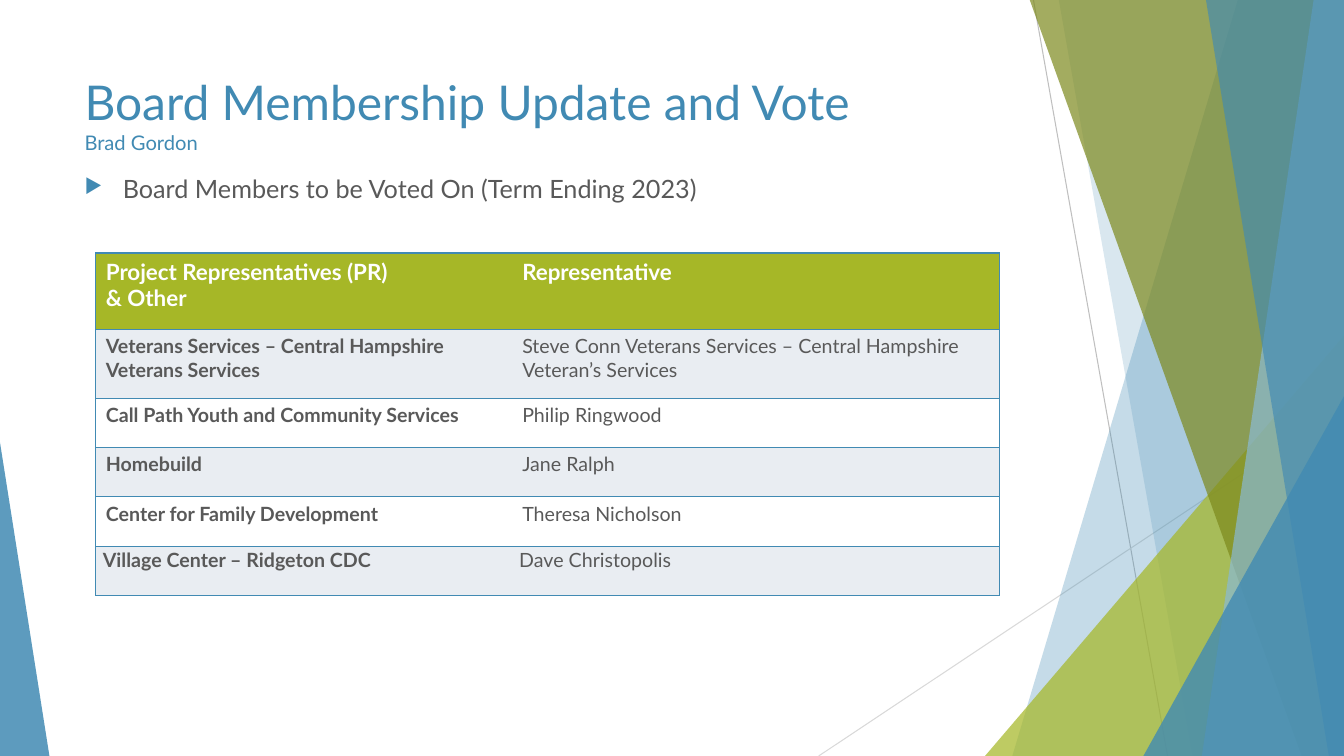
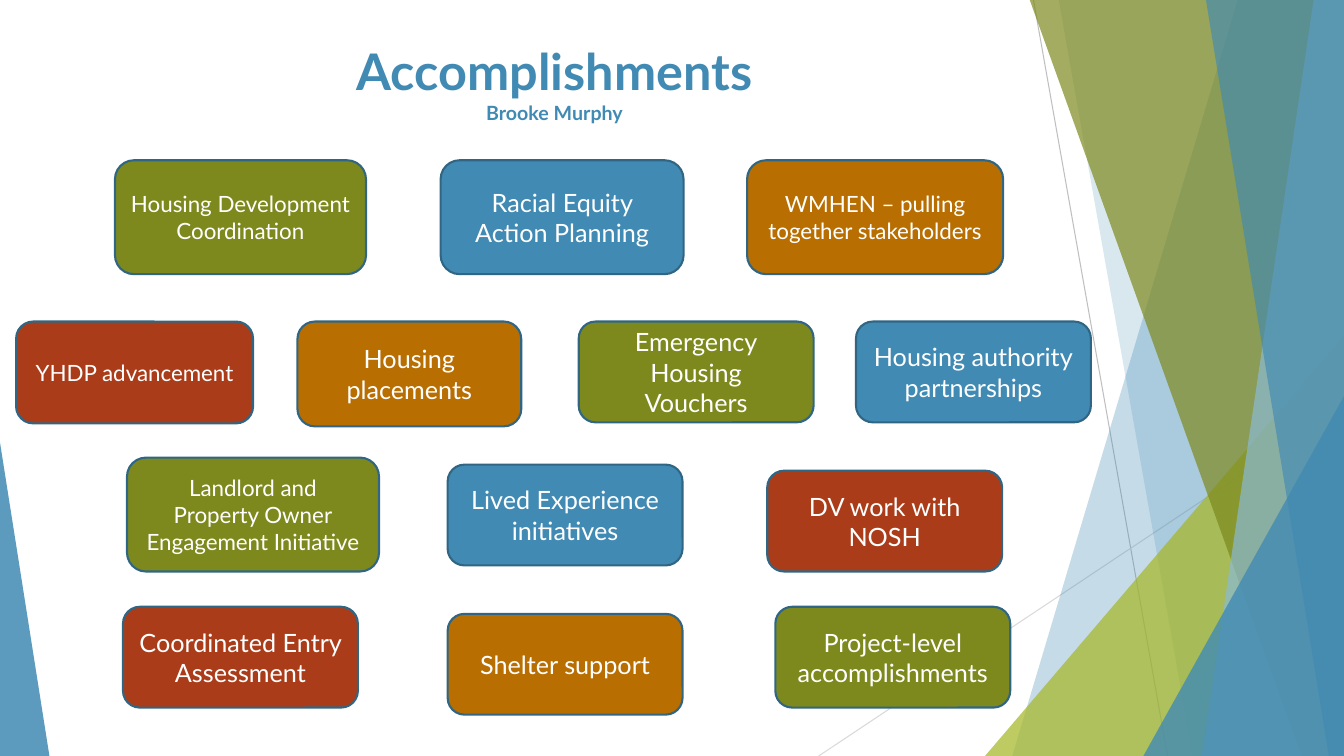
from dataclasses import dataclass

from lxml import etree
from pptx import Presentation
from pptx.dml.color import RGBColor
from pptx.enum.shapes import MSO_CONNECTOR, MSO_SHAPE
from pptx.enum.text import MSO_ANCHOR, PP_ALIGN
from pptx.oxml.ns import qn
from pptx.util import Inches, Pt

LEFT, CENTER = PP_ALIGN.LEFT, PP_ALIGN.CENTER
TOP, MIDDLE = MSO_ANCHOR.TOP, MSO_ANCHOR.MIDDLE
TRIANGLE, ROUNDED = MSO_SHAPE.ISOSCELES_TRIANGLE, MSO_SHAPE.ROUNDED_RECTANGLE
STRAIGHT = MSO_CONNECTOR.STRAIGHT


@dataclass(frozen=True)
class Theme:
    font: str = "Lato"
    blue: str = "418AB3"
    light_blue: str = "8ABAD4"
    dark_blue: str = "306684"
    lime: str = "A6B727"
    olive: str = "7D891D"
    orange: str = "B86E00"
    red: str = "AB3C19"
    text: str = "595959"
    band: str = "E9EDF2"
    white: str = "FFFFFF"
    title: float = 34.2
    big_title: float = 36
    subtitle: float = 14.4
    body: float = 18
    label: float = 16
    cell: float = 14


T = Theme()
W, H = 13.33, 7.5


def add_text(tf, text, size, color, bold=False, align=LEFT, anchor=TOP, spacing=None):
    """Append one paragraph per line of text to a text frame."""
    tf.word_wrap = True
    tf.vertical_anchor = anchor
    for line in text.split("\n"):
        p = tf.add_paragraph() if tf.text else tf.paragraphs[0]
        p.alignment = align
        if spacing:
            p.line_spacing = spacing
        r = p.add_run()
        r.text = line
        r.font.name, r.font.size, r.font.bold = T.font, Pt(size), bold
        r.font.color.rgb = RGBColor.from_string(color)
    return p


def paint(sp, color, alpha=None, line=None):
    """Fill a shape, with optional opacity in percent and outline colour."""
    sp.shadow.inherit = False
    sp.fill.solid()
    sp.fill.fore_color.rgb = RGBColor.from_string(color)
    if alpha:
        clr = sp.element.spPr.find(".//" + qn("a:srgbClr"))
        etree.SubElement(clr, qn("a:alpha"), val=str(alpha * 1000))
    if line:
        sp.line.color.rgb = RGBColor.from_string(line)
        sp.line.width = Pt(1.5)
    else:
        sp.line.fill.background()


prs = Presentation()
prs.slide_width, prs.slide_height = Inches(W), Inches(H)
blank = prs.slide_layouts[6]
board, wins = [prs.slides.add_slide(blank) for _ in range(2)]

# Shared backdrop
rays = [  # x1, y1, x2, y2, colour
    (10.25, 0, 11.58, H, "BFBFBF"),
    (W, 4.03, 8.12, H, "D9D9D9"),
]
facets = [  # bands: top x, bottom x; triangles: left, top, width, apex
    ("band", (12.28, 10.04), T.blue, 30),
    ("band", (10.5, 11.83), T.blue, 20),
    ("triangle", (9.77, 3.33, 3.56, 1), T.lime, 72),
    ("band", (10.21, 12.91), T.olive, 70),
    ("band", (13.03, 11.92), T.light_blue, 70),
    ("band", (11.96, 13.18), T.blue, 65),
    ("triangle", (11.34, 3.93, 1.99, 1), T.blue, 80),
    ("triangle", (0, 4.39, 0.49, 0), T.blue, 85),
]
for s in (board, wins):
    for x1, y1, x2, y2, color in rays:
        ray = s.shapes.add_connector(STRAIGHT, Inches(x1), Inches(y1), Inches(x2), Inches(y2))
        ray.line.color.rgb = RGBColor.from_string(color)
        ray.line.width = Pt(0.75)
        etree.SubElement(ray.element.spPr, qn("a:effectLst"))
    for kind, geometry, color, alpha in facets:
        if kind == "band":
            top_x, bottom_x = geometry
            top_y = Inches(-0.01)
            outline = s.shapes.build_freeform(Inches(top_x), top_y)
            outline.add_line_segments([(Inches(W), top_y), (Inches(W), Inches(H)),
                                       (Inches(bottom_x), Inches(H))], close=True)
            sp = outline.convert_to_shape()
        else:
            x, y, w, apex = geometry
            sp = s.shapes.add_shape(TRIANGLE, Inches(x), Inches(y), Inches(w), Inches(H - y))
            sp.adjustments[0] = apex
        paint(sp, color, alpha)

# Titles
titles = [
    (board, 0.74, 0.67, 0.94, "Board Membership Update and Vote", T.title,
     "Brad Gordon", T.subtitle, False, LEFT),
    (wins, 0.8, 0.35, 1.01, "Accomplishments", T.big_title,
     "Brooke Murphy", T.cell, True, CENTER),
]
for s, x, y, h, title, size, presenter, small, bold, align in titles:
    tf = s.shapes.add_textbox(Inches(x), Inches(y), Inches(9.4), Inches(h)).text_frame
    add_text(tf, title, size, T.blue, bold, align)
    add_text(tf, presenter, small, T.blue, bold, align)

# Board: bullet
tf = board.shapes.add_textbox(Inches(0.74), Inches(1.67), Inches(9.4), Inches(0.5)).text_frame
p = add_text(tf, "Board Members to be Voted On (Term Ending 2023)", T.body, T.text)
pPr = p._p.get_or_add_pPr()
pPr.set("marL", str(Inches(0.38)))
pPr.set("indent", str(Inches(-0.38)))
bullet_color = etree.SubElement(pPr, qn("a:buClr"))
etree.SubElement(bullet_color, qn("a:srgbClr"), val=T.blue)
etree.SubElement(pPr, qn("a:buSzPct"), val="80000")
etree.SubElement(pPr, qn("a:buChar"), char="▶")

# Board: table of members
members = [
    ("Project Representatives (PR)\n& Other", "Representative"),
    ("Veterans Services – Central Hampshire Veterans Services",
     "Steve Conn Veterans Services – Central Hampshire Veteran’s Services"),
    ("Call Path Youth and Community Services", "Philip Ringwood"),
    ("Homebuild", "Jane Ralph"),
    ("Center for Family Development", "Theresa Nicholson"),
    ("Village Center – Ridgeton CDC", "Dave Christopolis"),
]
heights = [0.76, 0.68] + [0.49] * 4
table = board.shapes.add_table(len(members), 2, Inches(0.95), Inches(2.51),
                               Inches(8.96), Inches(sum(heights))).table
for column, width in zip(table.columns, (4.13, 4.83)):
    column.width = Inches(width)
for i, (row, height) in enumerate(zip(members, heights)):
    table.rows[i].height = Inches(height)
    header, last = i == 0, i == len(members) - 1
    for j, text in enumerate(row):
        cell = table.cell(i, j)
        if last:
            cell.margin_left = cell.margin_right = Inches(0.07)
            cell.margin_top = cell.margin_bottom = 0
        add_text(cell.text_frame, text, T.label if header else T.cell,
                 T.white if header else T.text, bold=header or j == 0,
                 spacing=1.07 if last else None)
        # Borders come before the fill in the cell properties
        tcPr = cell._tc.get_or_add_tcPr()
        inner = "a:lnR" if j == 0 else "a:lnL"
        for side in ("a:lnL", "a:lnR", "a:lnT", "a:lnB"):
            ln = etree.SubElement(tcPr, qn(side), w=str(Pt(1)))
            if side == inner:
                etree.SubElement(ln, qn("a:noFill"))
            else:
                edge = etree.SubElement(ln, qn("a:solidFill"))
                etree.SubElement(edge, qn("a:srgbClr"), val=T.blue)
        cell.fill.solid()
        color = T.lime if header else T.band if i % 2 else T.white
        cell.fill.fore_color.rgb = RGBColor.from_string(color)

# Accomplishments: tiles, row by row
tiles = [  # left, top, width, height, colour, size, text
    (1.14, 1.59, 2.49, 1.13, T.olive, T.label, "Housing Development Coordination"),
    (4.37, 1.59, 2.41, 1.13, T.blue, T.body, "Racial Equity Action Planning"),
    (7.41, 1.59, 2.54, 1.13, T.orange, T.label, "WMHEN – pulling together stakeholders"),
    (0.16, 3.19, 2.35, 1.01, T.red, T.label, "YHDP advancement"),
    (2.95, 3.19, 2.22, 1.04, T.orange, T.body, "Housing placements"),
    (5.74, 3.19, 2.33, 1, T.olive, T.body, "Emergency\nHousing\nVouchers"),
    (8.49, 3.19, 2.33, 1, T.blue, T.body, "Housing authority\npartnerships"),
    (1.26, 4.54, 2.5, 1.13, T.olive, T.label,
     "Landlord and\nProperty Owner\nEngagement Initiative"),
    (4.44, 4.61, 2.33, 1, T.blue, T.body, "Lived Experience initiatives"),
    (7.61, 4.67, 2.33, 1, T.red, T.body, "DV work with NOSH"),
    (1.22, 6.02, 2.33, 1, T.red, T.body, "Coordinated Entry Assessment"),
    (4.44, 6.09, 2.33, 1, T.orange, T.body, "Shelter support"),
    (7.69, 6.02, 2.33, 1, T.olive, T.body, "Project-level accomplishments"),
]
for x, y, w, h, color, size, text in tiles:
    sp = wins.shapes.add_shape(ROUNDED, Inches(x), Inches(y), Inches(w), Inches(h))
    paint(sp, color, line=T.dark_blue)
    add_text(sp.text_frame, text, size, T.white, align=CENTER, anchor=MIDDLE)

prs.save("out.pptx")
